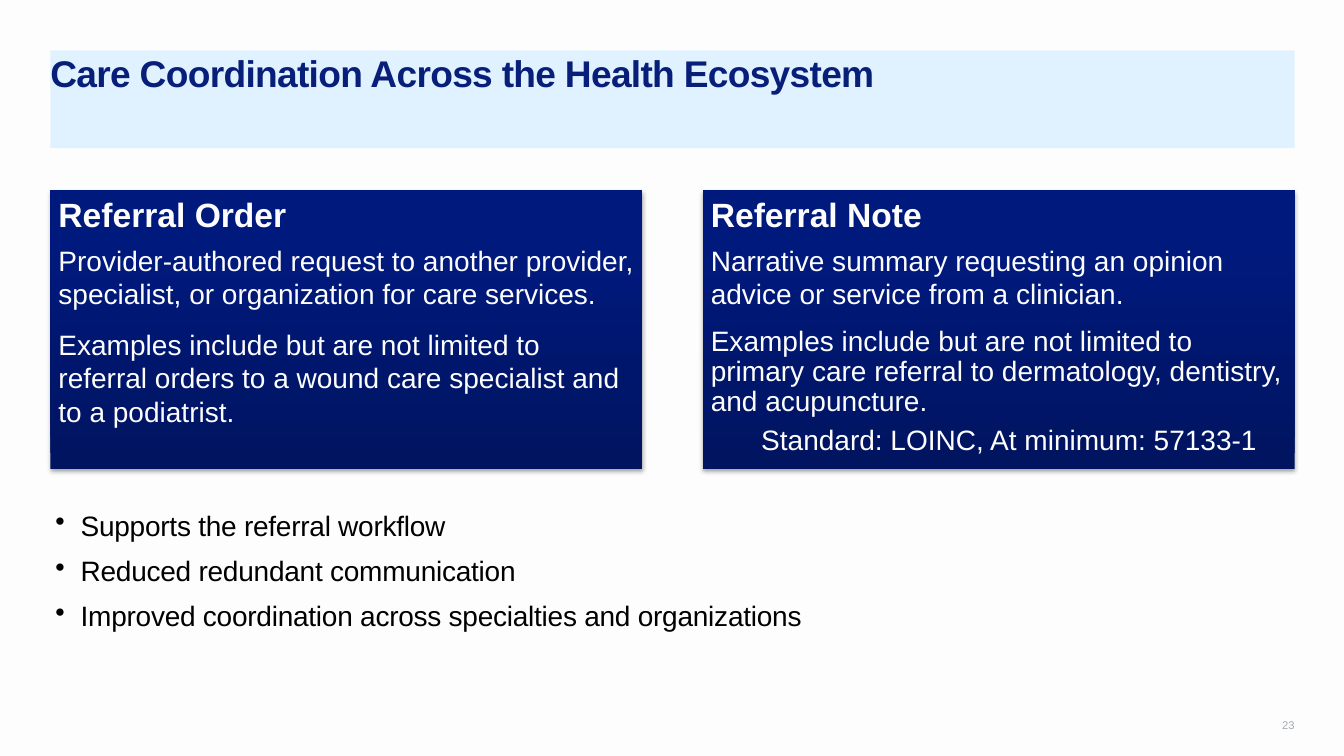
"""Build the care coordination slide with two referral cards and a benefits list."""
from dataclasses import dataclass

import lxml.etree
import pptx
import pptx.dml.color
import pptx.enum.shapes
import pptx.enum.text
import pptx.oxml
import pptx.oxml.ns
import pptx.util

Inches = pptx.util.Inches
Pt = pptx.util.Pt
RGBColor = pptx.dml.color.RGBColor
Align = pptx.enum.text.PP_ALIGN
Anchor = pptx.enum.text.MSO_ANCHOR

OFF_WHITE = RGBColor(0xFD, 0xFD, 0xFD)
PALE_BLUE = RGBColor(0xE0, 0xF2, 0xFF)
NAVY = RGBColor(0x08, 0x1F, 0x79)
BLACK = RGBColor(0x00, 0x00, 0x00)
GREY = RGBColor(0xA1, 0xAA, 0xB1)
CARD_STOPS = (
    (0, RGBColor(0x00, 0x14, 0x60)),
    (80, RGBColor(0x00, 0x19, 0x7D)),
    (100, RGBColor(0x00, 0x1A, 0x7E)),
)
FONT = "Arial"
MARGIN = 0.5
CARD_TOP, CARD_WIDTH, CARD_HEIGHT, CARD_STEP = 1.89, 5.87, 2.76, 6.47


@dataclass(frozen=True)
class Para:
    text: str
    size: float = 20
    color: RGBColor = OFF_WHITE
    bold: bool = False
    align: Align = Align.LEFT
    line: float = 1.0
    before: float = 0
    after: float = 0
    indent: float = 0
    bullet: bool = False
    tracking: float = 0


BENEFITS = (
    "Supports the referral workflow",
    "Reduced redundant communication",
    "Improved coordination across specialties and organizations",
)
CARDS = (
    (
        Para("Referral Order", 24, bold=True, line=0.9, after=6),
        Para("Provider-authored request to another provider, specialist, "
             "or organization for care services.", after=12),
        Para("Examples include but are not limited to referral orders to a "
             "wound care specialist and to a podiatrist.", after=6),
    ),
    (
        Para("Referral Note", 24, bold=True, line=0.9, after=6),
        Para("Narrative summary requesting an opinion advice or service "
             "from a clinician.", after=12),
        Para("Examples include but are not limited to primary care referral to "
             "dermatology, dentistry, and acupuncture.", line=0.9),
        Para("Standard: LOINC, At minimum: 57133-1", line=0.9, before=6, indent=0.5),
    ),
)


def write_text(shape, paras, insets: tuple[float, float, float, float],
               anchor: Anchor = Anchor.TOP) -> None:
    tf = shape.text_frame
    tf.word_wrap = True
    tf.vertical_anchor = anchor
    tf.margin_left, tf.margin_top, tf.margin_right, tf.margin_bottom = map(Inches, insets)
    for i, para in enumerate(paras):
        p = tf.add_paragraph() if i else tf.paragraphs[0]
        p.alignment = para.align
        p.line_spacing = para.line
        p.space_before = Pt(para.before)
        p.space_after = Pt(para.after)
        pPr = p._p.get_or_add_pPr()
        pPr.set("marL", str(Inches(para.indent)))
        pPr.set("indent", str(-Inches(para.indent) if para.bullet else 0))
        if para.bullet:
            bullet = lxml.etree.SubElement(pPr, pptx.oxml.ns.qn("a:buChar"))
            bullet.set("char", "•")
        r = p.add_run()
        r.text = para.text
        r.font.name = FONT
        r.font.size = Pt(para.size)
        r.font.bold = para.bold
        r.font.color.rgb = para.color
        if para.tracking:
            r._r.get_or_add_rPr().set("spc", str(round(para.tracking * 100)))


def add_rect(s, left: float, top: float, width: float, height: float):
    sp = s.shapes.add_shape(pptx.enum.shapes.MSO_SHAPE.RECTANGLE,
                            Inches(left), Inches(top), Inches(width), Inches(height))
    sp.line.fill.background()
    sp.shadow.inherit = False
    return sp


def add_text(s, left: float, top: float, width: float, height: float):
    return s.shapes.add_textbox(Inches(left), Inches(top), Inches(width), Inches(height))


def style_card(sp) -> None:
    ns = pptx.oxml.ns.nsdecls("a")
    stops = "".join(f'<a:gs pos="{pos * 1000}"><a:srgbClr val="{color}"/></a:gs>'
                    for pos, color in CARD_STOPS)
    spPr = sp._element.spPr
    spPr.find(pptx.oxml.ns.qn("a:prstGeom")).addnext(pptx.oxml.parse_xml(
        f'<a:gradFill {ns} rotWithShape="1"><a:gsLst>{stops}</a:gsLst>'
        '<a:lin ang="16200000" scaled="0"/></a:gradFill>'))
    spPr.find(pptx.oxml.ns.qn("a:effectLst")).append(pptx.oxml.parse_xml(
        f'<a:outerShdw {ns} blurRad="{Pt(3.1)}" dist="{Pt(1.8)}" dir="5400000" '
        'rotWithShape="0"><a:srgbClr val="000000"><a:alpha val="35000"/>'
        '</a:srgbClr></a:outerShdw>'))


def main() -> None:
    prs = pptx.Presentation()
    prs.slide_width, prs.slide_height = Inches(13.33), Inches(7.5)
    s = prs.slides.add_slide(prs.slide_layouts[6])
    s.background.fill.solid()
    s.background.fill.fore_color.rgb = OFF_WHITE

    number = add_text(s, 12.54, 6.89, 0.3, 0.37)
    write_text(number, [Para("23", 8, GREY, align=Align.RIGHT, line=0.9)],
               (0, 0, 0, 0), Anchor.BOTTOM)

    title = add_rect(s, MARGIN, 0.5, 12.34, 0.97)
    title.fill.solid()
    title.fill.fore_color.rgb = PALE_BLUE
    write_text(title, [Para("Care Coordination Across the Health Ecosystem", 26.5, NAVY,
                            bold=True, tracking=-0.5)], (0, 0, 0, 0.05))

    benefits = add_text(s, MARGIN, 4.96, 12.33, 1.91)
    write_text(benefits, [Para(text, color=BLACK, line=1.1, before=6 if i else 0,
                               indent=0.25, bullet=True, tracking=-0.2)
                          for i, text in enumerate(BENEFITS)], (0.05,) * 4)

    for i, paras in enumerate(CARDS):
        card = add_rect(s, MARGIN + i * CARD_STEP, CARD_TOP, CARD_WIDTH, CARD_HEIGHT)
        style_card(card)
        write_text(card, paras, (0.08,) * 4)

    prs.save("out.pptx")


if __name__ == "__main__":
    main()
